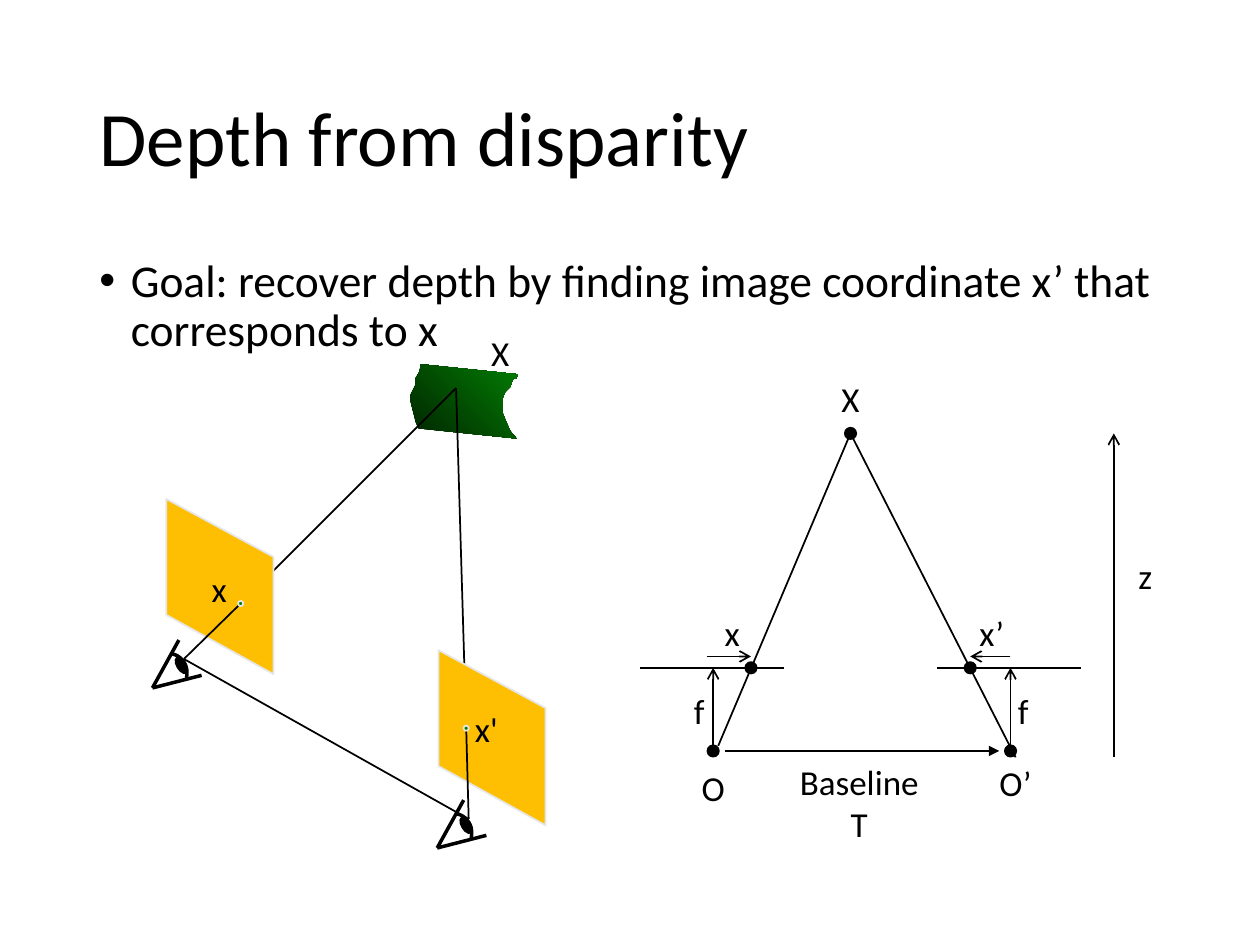
from dataclasses import dataclass

import pptx
import pptx.dml.color
import pptx.enum.shapes
import pptx.enum.text
import pptx.oxml.ns
import pptx.util

Inches = pptx.util.Inches
qn = pptx.oxml.ns.qn
ALIGN = pptx.enum.text.PP_ALIGN
ANCHOR = pptx.enum.text.MSO_ANCHOR


@dataclass(frozen=True)
class Theme:
    font: str = "Calibri"
    ink: str = "000000"
    plane: str = "FEBF02"
    edge: str = "E7E6E6"
    surface_dark: str = "012501"
    surface_light: str = "037C03"
    title_size: int = 44
    body_size: int = 26
    label_size: int = 20
    thin: float = 1
    medium: float = 1.5
    thick: float = 2


def rgb(value):
    return pptx.dml.color.RGBColor.from_string(value)


def assign(target, values):
    for name, value in values.items():
        setattr(target, name, value)


class Page:
    def __init__(self, slide, theme):
        self.slide = slide
        self.theme = theme

    def set_text(self, box, text, size, frame_format, para_format):
        frame = box.text_frame
        assign(frame, {"auto_size": pptx.enum.text.MSO_AUTO_SIZE.NONE, "word_wrap": True, **frame_format})
        para = frame.paragraphs[0]
        para.text = text
        assign(para, para_format)
        for span in para.runs:
            assign(span.font, {"name": self.theme.font, "size": pptx.util.Pt(size)})
            span.font.color.rgb = rgb(self.theme.ink)
        return para

    def title(self, text, left, top, width, height):
        box = self.slide.shapes.title
        assign(box, {"left": Inches(left), "top": Inches(top), "width": Inches(width), "height": Inches(height)})
        self.set_text(box, text, self.theme.title_size, {"vertical_anchor": ANCHOR.MIDDLE},
                      {"alignment": ALIGN.LEFT, "line_spacing": 0.9})

    def bullet(self, text, left, top, width, height):
        box = self.slide.shapes.add_textbox(*map(Inches, (left, top, width, height)))
        para = self.set_text(box, text, self.theme.body_size, {}, {"line_spacing": 0.9})
        properties = para._p.get_or_add_pPr()
        properties.set("marL", str(Inches(0.25)))
        properties.set("indent", str(Inches(-0.25)))
        for tag, values in (("a:buFont", {"typeface": "Arial"}), ("a:buChar", {"char": "•"})):
            properties.append(properties.makeelement(qn(tag), values))

    def label(self, text, x, y, width=0.89, height=0.44):
        box = self.slide.shapes.add_textbox(
            *map(Inches, (x - width / 2, y - height / 2, width, height)))
        self.set_text(box, text, self.theme.label_size, {"vertical_anchor": ANCHOR.MIDDLE},
                      {"alignment": ALIGN.CENTER})

    def stroke(self, shape, color, width):
        shape.line.color.rgb = rgb(color)
        shape.line.width = pptx.util.Pt(width)

    def line(self, start, end, width=None, tip=None):
        connector = self.slide.shapes.add_connector(
            pptx.enum.shapes.MSO_CONNECTOR.STRAIGHT, *map(Inches, (*start, *end)))
        self.stroke(connector, self.theme.ink, width or self.theme.thin)
        properties = connector.element.spPr
        if tip:
            outline = properties.find(qn("a:ln"))
            outline.append(outline.makeelement(qn("a:tailEnd"), {"type": tip}))
        properties.append(properties.makeelement(qn("a:effectLst"), {}))

    def ellipse(self, x, y, width, height, fill=None, edge=None, rotation=0):
        shape = self.slide.shapes.add_shape(
            pptx.enum.shapes.MSO_SHAPE.OVAL,
            *map(Inches, (x - width / 2, y - height / 2, width, height)))
        shape.shadow.inherit = False
        shape.rotation = rotation
        shape.fill.solid()
        shape.fill.fore_color.rgb = rgb(fill or self.theme.ink)
        self.stroke(shape, edge or self.theme.ink, self.theme.thin)

    def outline(self, points, closed=True):
        corners = [(Inches(x), Inches(y)) for x, y in points]
        builder = self.slide.shapes.build_freeform(*corners[0])
        builder.add_line_segments(corners[1:], close=closed)
        shape = builder.convert_to_shape()
        shape.shadow.inherit = False
        return shape

    def plane(self, x, y):
        shape = self.outline([(x, y), (x + 0.85, y + 0.46), (x + 0.85, y + 1.39), (x, y + 0.92)])
        shape.fill.solid()
        shape.fill.fore_color.rgb = rgb(self.theme.plane)
        self.stroke(shape, self.theme.edge, self.theme.thin)

    def surface(self, points):
        shape = self.outline(points)
        shape.fill.gradient()
        shape.fill.gradient_angle = 45
        colors = (self.theme.surface_dark, self.theme.surface_light)
        for stop, color, position in zip(shape.fill.gradient_stops, colors, (0, 1)):
            stop.color.rgb = rgb(color)
            stop.position = position
        shape.line.fill.background()

    def eye(self, x, y):
        curve = ((0.16, -0.27), (0.24, -0.25), (0.29, -0.17), (0.27, -0.08))
        points = []
        for step in range(11):
            t = step / 10
            weights = ((1 - t) ** 3, 3 * t * (1 - t) ** 2, 3 * t ** 2 * (1 - t), t ** 3)
            points.append((x + sum(w * p[0] for w, p in zip(weights, curve)),
                           y + sum(w * p[1] for w, p in zip(weights, curve))))
        arc = self.outline(points, closed=False)
        arc.fill.background()
        self.stroke(arc, self.theme.ink, self.theme.thick)
        self.line((x + 0.21, y - 0.38), (x, y), self.theme.thick)
        self.ellipse(x + 0.23, y - 0.18, 0.07, 0.14, rotation=329)
        self.line((x, y), (x + 0.39, y - 0.1), self.theme.thick)


def draw_triangle(page):
    apex = (6.75, 3.44)
    center_y, image_y, dot = 5.96, 5.3, 0.09
    page.ellipse(*apex, dot, dot)
    page.label("X", apex[0], 3.16)
    cameras = (
        (5.66, 5.96, "O", 5.66, 6.25, "x", 5.81, 5.55, (5.7, 5.92), 5.61),
        (8.02, 7.7, "O’", 8.06, 6.21, "x’", 7.87, 8.12, (8.06, 6.01), 8.02),
    )
    for x, image_x, name, name_x, name_y, offset, offset_x, focal_x, ray_start, arrow_x in cameras:
        page.ellipse(x, center_y, dot, dot)
        page.line((x - 0.58, image_y), (x + 0.56, image_y))
        page.line(ray_start, apex)
        page.line((x, 5.92), (x, image_y), tip="arrow")
        page.ellipse(image_x, image_y, dot, dot)
        page.line((arrow_x, 5.21), (image_x, 5.21), tip="arrow")
        page.label("f", focal_x, 5.64)
        page.label(offset, offset_x, 5.02)
        page.label(name, name_x, name_y)
    page.line((5.75, center_y), (7.93, center_y), page.theme.medium, "triangle")
    page.label("Baseline\vT", 6.82, 6.37, 1.28, 0.77)
    page.line((8.84, 6.01), (8.84, apex[1]), tip="arrow")
    page.label("z", 9.09, 4.57)


def draw_scene(page):
    left_edge = [(3.34, 2.89), (3.33, 2.95), (3.3, 3), (3.3, 3.05), (3.26, 3.13), (3.26, 3.19),
                 (3.28, 3.27), (3.3, 3.35), (3.32, 3.4)]
    right_edge = [(4.1, 3.48), (4.05, 3.42), (4.01, 3.33), (3.99, 3.28), (3.99, 3.16), (4.01, 3.11),
                  (4.05, 3.07), (4.07, 3.01), (4.1, 3), (4.11, 2.97)]
    page.surface(left_edge + right_edge)
    target = (3.62, 3.08)
    page.line((1.46, 5.23), (3.72, 6.5))
    cameras = (
        ((1.32, 3.96), (1.91, 4.79), (1.46, 5.23), (1.21, 5.46), "x", (1.74, 4.67)),
        ((3.48, 5.16), (3.7, 5.78), (3.72, 6.5), (3.47, 6.73), "x'", (3.86, 5.78)),
    )
    for plane, image, pupil, eye, name, name_at in cameras:
        page.line(image, target)
        page.plane(*plane)
        page.line(pupil, image)
        page.eye(*eye)
        page.ellipse(*image, 0.04, 0.04, page.theme.surface_light, page.theme.edge)
        page.label(name, *name_at, width=0.65)
    page.label("X", 3.97, 2.8, width=0.65)


def main():
    deck = pptx.Presentation()
    assign(deck, {"slide_width": Inches(10), "slide_height": Inches(7.5)})
    page = Page(deck.slides.add_slide(deck.slide_layouts[5]), Theme())
    page.title("Depth from disparity", 0.69, 0.4, 8.62, 1.45)
    page.bullet("Goal: recover depth by finding image coordinate x’ that corresponds to x",
                0.69, 2, 8.62, 4.76)
    draw_triangle(page)
    draw_scene(page)
    deck.save("out.pptx")


if __name__ == "__main__":
    main()
